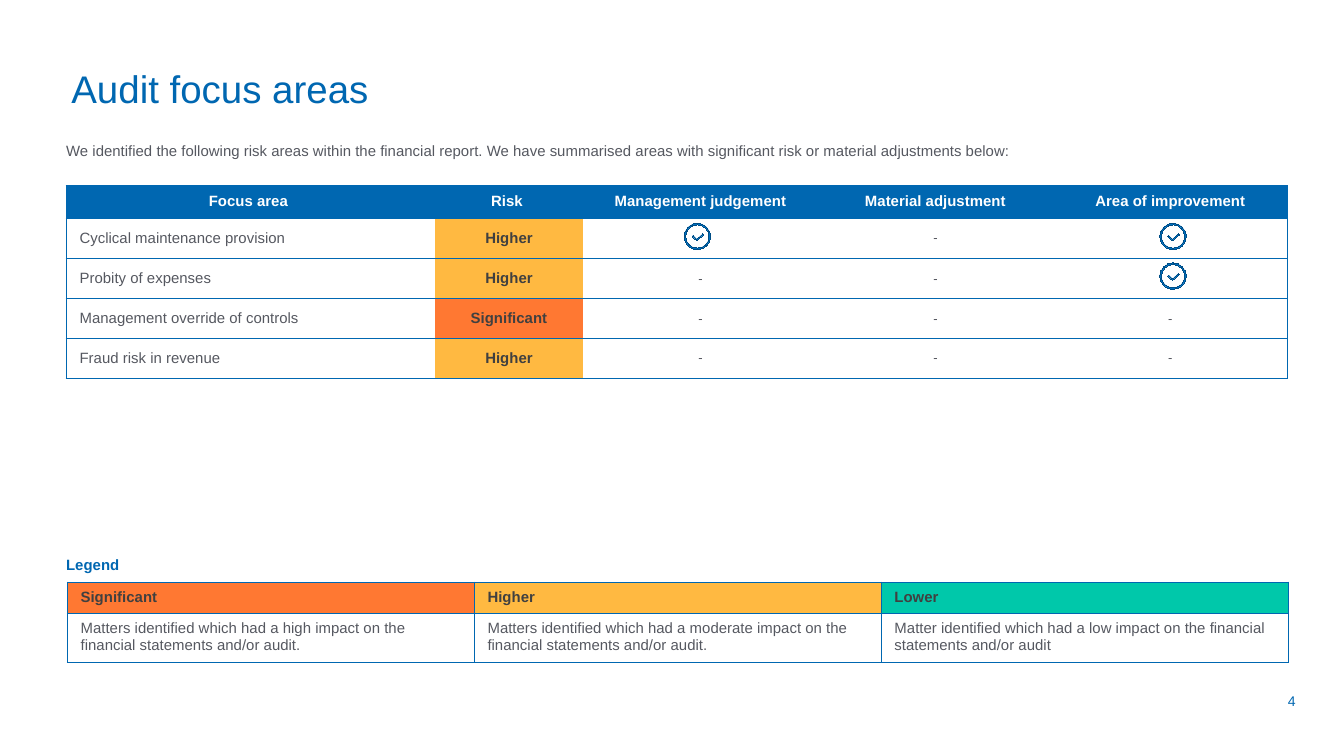
from pptx import Presentation
from pptx.dml.color import RGBColor
from pptx.enum.text import MSO_ANCHOR as Anchor, PP_ALIGN as Align
from pptx.oxml.ns import qn
from pptx.util import Cm, Pt
from lxml.etree import SubElement

COLORS = {
    "blue": "0067B1", "tick": "0070C0", "tick_edge": "004D85",
    "body": "555860", "dark": "404040", "white": "FFFFFF",
    "Significant": "FF7832", "Higher": "FFB941", "Lower": "00C8AA",
}
LEFT = 1.25
TICK = "✓"  # marks the cells that get a tick icon

# Focus area table; the first two headings end in a no-break space
HEADINGS = ["Focus area ", "Risk ", "Management judgement",
            "Material adjustment", "Area of improvement"]
FOCUS_AREAS = [
    ["Cyclical maintenance provision", "Higher", TICK, "-", TICK],
    ["Probity of expenses", "Higher", "-", "-", TICK],
    ["Management override of controls", "Significant", "-", "-", "-"],
    ["Fraud risk in revenue", "Higher", "-", "-", "-"],
]
FOCUS_TOP = 3.51
FOCUS_WIDTHS = [6.97, 2.8, 4.44, 4.44, 4.44]
FOCUS_HEIGHTS = [0.61] + [0.75] * len(FOCUS_AREAS)
TICK_CENTERS = {2: 13.18, 4: 22.17}  # by column

# Legend table
LEGEND = {
    "Significant": "Matters identified which had a high impact on the "
                   "financial statements and/or audit.",
    "Higher": "Matters identified which had a moderate impact on the "
              "financial statements and/or audit.",
    "Lower": "Matter identified which had a low impact on the financial "
             "statements and/or audit",
}


def rgb(name):
    return RGBColor.from_string(COLORS[name])


def write(frame, text, size, color, bold=False, align=Align.LEFT, spacing=None):
    paragraph = frame.paragraphs[0]
    paragraph.text = text
    paragraph.alignment = align
    paragraph.line_spacing = spacing
    font = paragraph.font
    font.name, font.size, font.bold = "Arial", Pt(size), bold
    font.color.rgb = rgb(color)


def add_label(slide, box, text, size, color, anchor=Anchor.TOP, **style):
    frame = slide.shapes.add_textbox(*map(Cm, box)).text_frame
    frame.word_wrap = True
    frame.vertical_anchor = anchor
    frame.margin_left = frame.margin_right = 0
    frame.margin_top = frame.margin_bottom = 0
    write(frame, text, size, color, **style)


def add_plain_table(slide, left, top, widths, heights):
    table = slide.shapes.add_table(
        len(heights), len(widths), Cm(left), Cm(top),
        Cm(sum(widths)), Cm(sum(heights))).table
    table.first_row = table.horz_banding = False
    for column, width in zip(table.columns, widths):
        column.width = Cm(width)
    for row, height in zip(table.rows, heights):
        row.height = Cm(height)
    return table


def dress_cell(cell, sides, line_width, fill=None):
    """Draw the named sides (of L, R, T, B), hide the others, then fill."""
    properties = cell._tc.get_or_add_tcPr()
    for side in "LRTB":
        line = SubElement(properties, qn(f"a:ln{side}"), w=str(Pt(line_width)))
        if side in sides:
            solid = SubElement(line, qn("a:solidFill"))
            SubElement(solid, qn("a:srgbClr"), val=COLORS["blue"])
        else:
            SubElement(line, qn("a:noFill"))
    if fill:
        cell.fill.solid()
        cell.fill.fore_color.rgb = rgb(fill)
    else:
        cell.fill.background()


def circle_controls(radius):
    """Start point and the control points of four Bezier quarters."""
    r, k = radius, radius * 0.55
    return [(0, r), (-k, r), (-r, k), (-r, 0), (-r, -k), (-k, -r), (0, -r),
            (k, -r), (r, -k), (r, 0), (r, k), (k, r), (0, r)]


def bend(segments):
    """Turn each three line segments into one Bezier curve."""
    for first in range(0, len(segments), 3):
        group = segments[first:first + 3]
        outline = group[0].getparent()
        curve = SubElement(outline, qn("a:cubicBezTo"))
        group[0].addprevious(curve)
        for segment in group:
            curve.append(segment[0])
            outline.remove(segment)


def add_tick(slide, center_x, center_y):
    """Ring with a check mark, as one outline."""
    check = [(-0.01, 0.08), (-0.1, 0), (-0.08, -0.02),
             (-0.01, 0.05), (0.1, -0.05), (0.12, -0.03)]
    ring, hole, mark = [
        [(Cm(center_x + x), Cm(center_y + y)) for x, y in contour]
        for contour in (circle_controls(0.25), circle_controls(0.22), check)]
    builder = slide.shapes.build_freeform(*ring[0])
    builder.add_line_segments(ring[1:])
    for contour in (hole, mark):
        builder.move_to(*contour[0])
        builder.add_line_segments(contour[1:])
    tick = builder.convert_to_shape()
    segments = list(tick._element.iter(qn("a:lnTo")))
    bend(segments[:len(ring) + len(hole) - 2])
    tick.shadow.inherit = False
    tick.fill.solid()
    tick.fill.fore_color.rgb = rgb("tick")
    tick.line.color.rgb = rgb("tick_edge")
    tick.line.width = Pt(0.01)


def add_focus_table(slide):
    table = add_plain_table(slide, LEFT, FOCUS_TOP, FOCUS_WIDTHS, FOCUS_HEIGHTS)
    last = len(HEADINGS) - 1
    for r, row in enumerate([HEADINGS] + FOCUS_AREAS):
        for c, text in enumerate(row):
            cell = table.cell(r, c)
            sides = "TB" + ("L" if c == 0 else "R" if c == last else "")
            align = Align.CENTER if r == 0 or c else Align.LEFT
            if r == 0:
                dress_cell(cell, sides, 0.5, "blue")
                write(cell.text_frame, text, 8, "white", True, align)
                continue
            dress_cell(cell, sides, 0.5, text if c == 1 else None)
            cell.vertical_anchor = Anchor.MIDDLE
            cell.margin_top = cell.margin_bottom = Cm(0 if text == TICK else 0.19)
            if text == TICK:
                add_tick(slide, TICK_CENTERS[c],
                         FOCUS_TOP + sum(FOCUS_HEIGHTS[:r]) + 0.35)
            elif c == 1:
                write(cell.text_frame, text, 8, "dark", True, align)
            else:
                write(cell.text_frame, text, 7 if c else 8, "body", False, align)


def add_legend_table(slide):
    # Rows grow to fit their text
    table = add_plain_table(slide, 1.27, 11, [7.69] * len(LEGEND), [0.51, 0.5])
    for c, (level, meaning) in enumerate(LEGEND.items()):
        heading, description = table.cell(0, c), table.cell(1, c)
        dress_cell(heading, "LRTB", 0.25, level)
        heading.vertical_anchor = Anchor.MIDDLE
        write(heading.text_frame, level, 8, "dark", True)
        dress_cell(description, "LRTB", 0.25)
        write(description.text_frame, meaning, 8, "body")


def main():
    deck = Presentation()
    deck.slide_width, deck.slide_height = Cm(25.4), Cm(14.29)
    slide = deck.slides.add_slide(deck.slide_layouts[6])

    # Heading and introduction
    add_label(slide, (1.35, 1.32, 23.09, 0.69), "Audit focus areas", 20.6,
              "blue", spacing=0.9)
    add_label(slide, (LEFT, 2.72, 18.75, 0.5),
              "We identified the following risk areas within the financial "
              "report. We have summarised areas with significant risk or "
              "material adjustments below:", 8, "body", spacing=0.9)

    # Focus areas
    add_focus_table(slide)

    # Legend
    add_label(slide, (LEFT, 10.54, 23.09, 0.4), "Legend", 8, "blue",
              bold=True, spacing=0.9)
    add_legend_table(slide)

    # Page number
    add_label(slide, (23.93, 13.08, 0.97, 0.33), "4", 7.5, "blue",
              Anchor.MIDDLE, align=Align.CENTER)

    deck.save("out.pptx")


if __name__ == "__main__":
    main()
